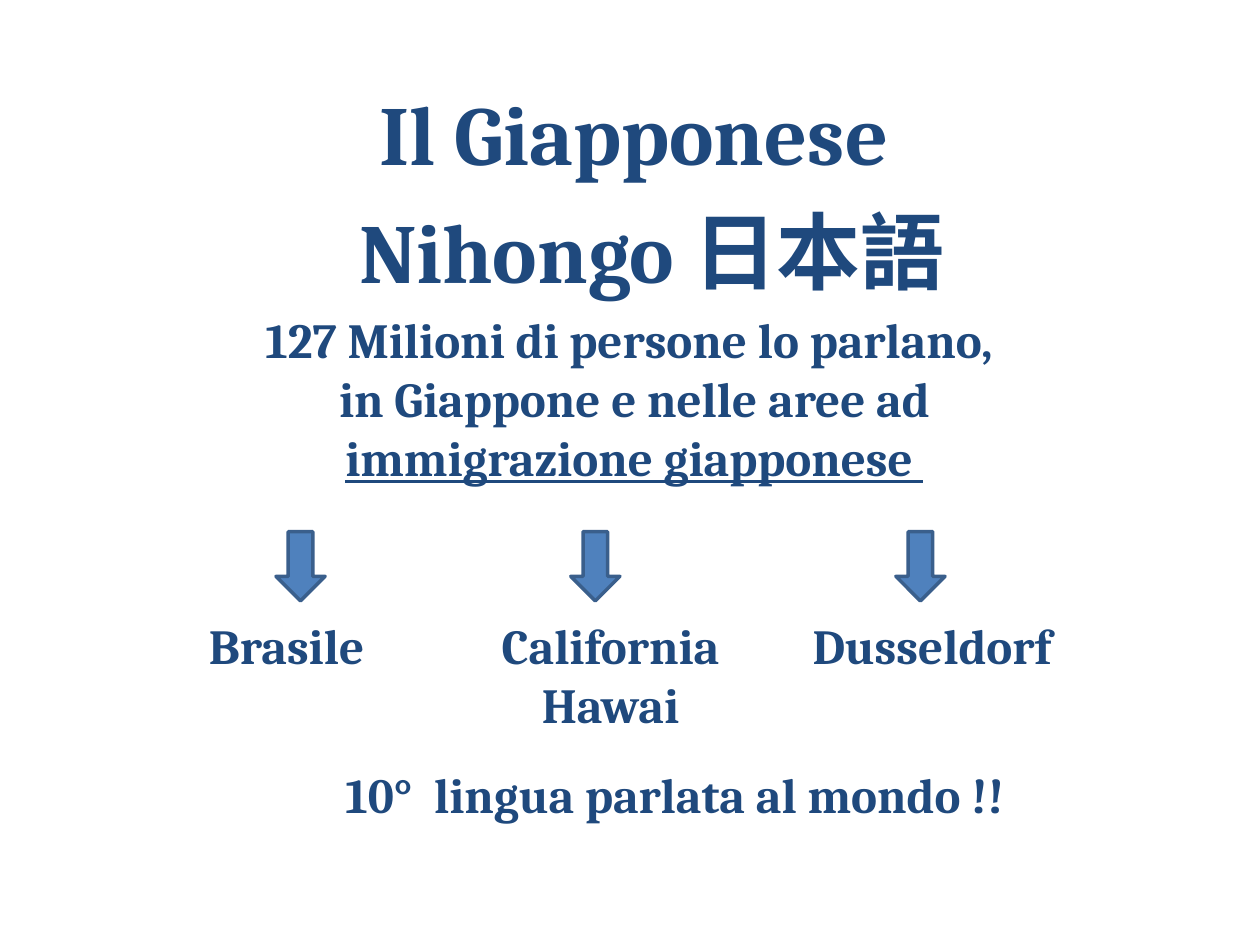
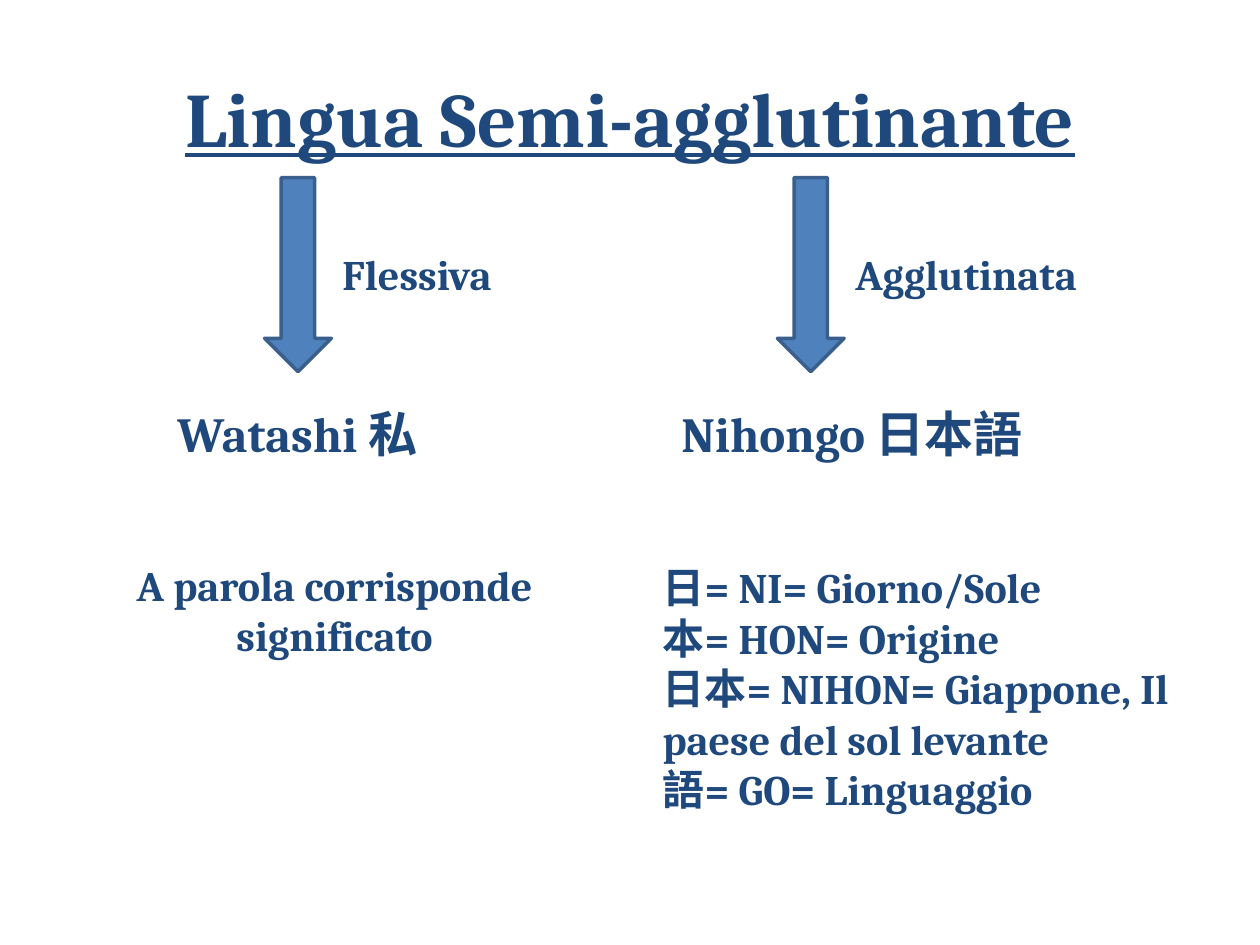
from pptx import Presentation
from pptx.dml.color import RGBColor
from pptx.enum.shapes import MSO_SHAPE
from pptx.enum.text import MSO_ANCHOR, MSO_AUTO_SIZE, PP_ALIGN
from pptx.util import Inches, Pt

DOWN_ARROW = MSO_SHAPE.DOWN_ARROW
TOP, MIDDLE = MSO_ANCHOR.TOP, MSO_ANCHOR.MIDDLE
NO_FIT, GROW = MSO_AUTO_SIZE.NONE, MSO_AUTO_SIZE.SHAPE_TO_FIT_TEXT
LEFT, CENTER = PP_ALIGN.LEFT, PP_ALIGN.CENTER

WIDTH, HEIGHT = Inches(10), Inches(7.5)
TITLE_ONLY = 5
FONT = "Cambria"
NAVY, ARROW_BLUE, ARROW_EDGE = "1F497D", "4F81BD", "3A5F8C"


def color(hex_value):
    return RGBColor.from_string(hex_value)


def area(left, top, width, height):
    return (round(WIDTH * left / 100), round(HEIGHT * top / 100),
            round(WIDTH * width / 100), round(HEIGHT * height / 100))


def write(frame, lines, size, align):
    for index, line in enumerate(lines):
        paragraph = frame.paragraphs[0] if index == 0 else frame.add_paragraph()
        paragraph.text = line
        paragraph.alignment = align
        font = paragraph.font
        font.name, font.size, font.bold = FONT, Pt(size), True
        font.color.rgb = color(NAVY)
    return frame.paragraphs


def add_titled_slide(deck, lines, size, box, anchor):
    slide = deck.slides.add_slide(deck.slide_layouts[TITLE_ONLY])
    title = slide.shapes.title
    title.left, title.top, title.width, title.height = area(*box)
    frame = title.text_frame
    frame.auto_size, frame.vertical_anchor = NO_FIT, anchor
    return slide, write(frame, lines, size, CENTER)


def add_text(slide, box, lines, size=28, align=LEFT, wrap=True):
    frame = slide.shapes.add_textbox(*area(*box)).text_frame
    frame.word_wrap, frame.auto_size = wrap, GROW
    return write(frame, lines, size, align)


def add_arrow(slide, *box):
    arrow = slide.shapes.add_shape(DOWN_ARROW, *area(*box))
    arrow.shadow.inherit = False
    arrow.fill.solid()
    arrow.fill.fore_color.rgb = color(ARROW_BLUE)
    arrow.line.color.rgb = color(ARROW_EDGE)
    arrow.line.width = Pt(2)


def build_speakers(deck):
    slide, (_, native_name) = add_titled_slide(
        deck, ["Il Giapponese", "Nihongo 日本語"], 48, (5.3, 8, 90, 25), TOP)
    native_name.space_before = Pt(9.6)
    native_name._p.get_or_add_pPr().set("marL", str(Inches(0.29)))

    speakers = add_text(
        slide, (16.5, 32.13, 67.7, 20.13),
        ["127 Milioni di persone lo parlano, ", "in Giappone e nelle aree ad",
         "immigrazione giapponese "], align=CENTER, wrap=False)
    speakers[-1].font.underline = True

    regions = [
        (21.9, 15.6, 15.5, 7.6, "Brasile", LEFT),
        (45.3, 37.5, 21.9, 13.87, "California Hawai", CENTER),
        (71.1, 63.5, 22.9, 7.6, "Dusseldorf", LEFT),
    ]
    for arrow_left, left, width, height, region, align in regions:
        add_arrow(slide, arrow_left, 56.27, 3.9, 7.33)
        add_text(slide, (left, 64.53, width, height), [region], align=align)

    add_text(slide, (22.9, 80.27, 61.3, 7.6),
             ["10°  lingua parlata al mondo !!"], align=CENTER, wrap=False)


def build_word_types(deck):
    slide, (heading,) = add_titled_slide(
        deck, ["Lingua Semi-agglutinante"], 44, (5, 4, 90, 16.67), MIDDLE)
    heading.font.underline = True

    word_types = [
        (21, "Flessiva", 15.3, 13.1, 23.5, "Watashi 私"),
        (61.7, "Agglutinata", 20.7, 53.1, 32, "Nihongo 日本語"),
    ]
    for left, kind, kind_width, word_left, word_width, word in word_types:
        add_arrow(slide, left, 18.8, 5.3, 20.53)
        add_text(slide, (left + 5.2, 25.6, kind_width, 6.67), [kind], 24,
                 wrap=False)
        add_text(slide, (word_left, 42, word_width, 7.6), [word], wrap=False)

    add_text(slide, (7.4, 58.53, 38.3, 12.13),
             ["A parola corrisponde significato"], 24, CENTER)
    add_text(slide, (51.6, 58.8, 44.5, 32.27),
             ["日= NI= Giorno/Sole", "本= HON= Origine",
              "日本= NIHON= Giappone, Il paese del sol levante",
              "語= GO= Linguaggio"], 24)


def main():
    deck = Presentation()
    deck.slide_width, deck.slide_height = WIDTH, HEIGHT
    build_speakers(deck)
    build_word_types(deck)
    deck.save("out.pptx")


if __name__ == "__main__":
    main()
